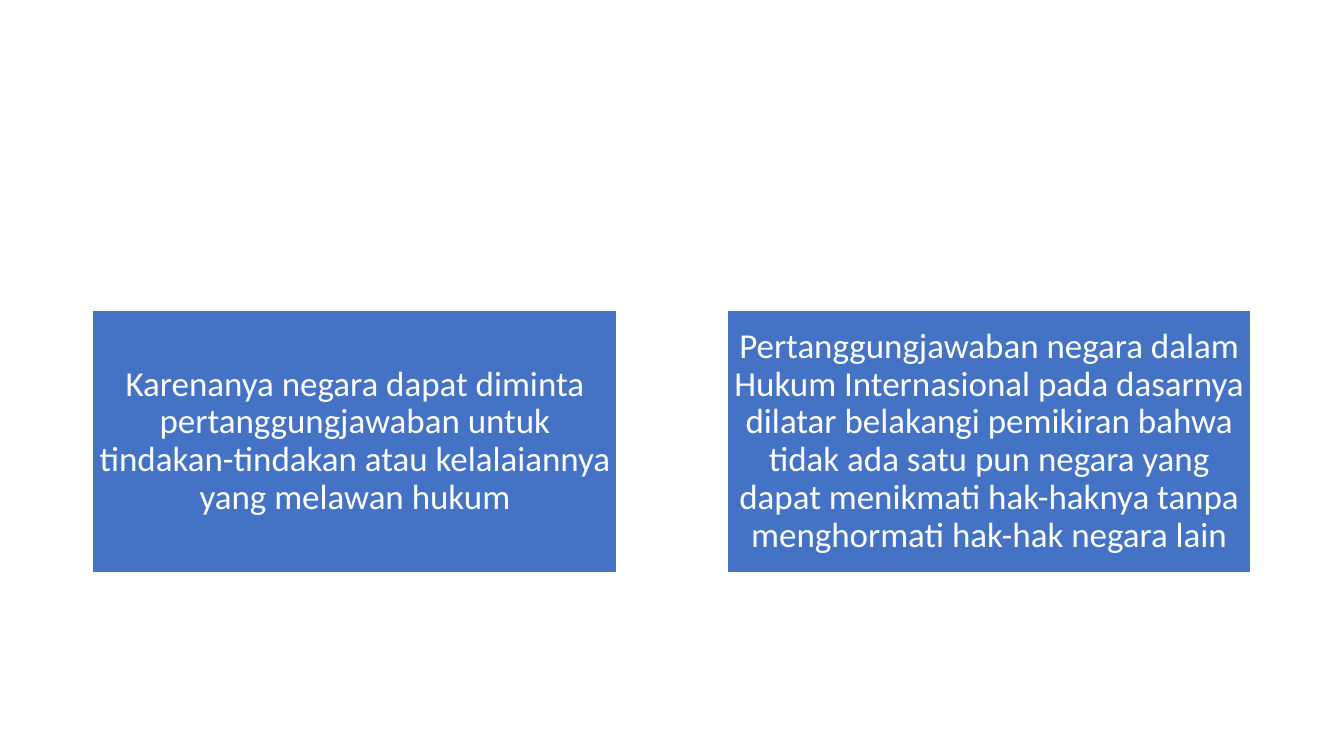
from pptx import Presentation
from pptx import util as u
from pptx.dml.color import RGBColor
from pptx.enum import shapes, text

HUES = {"card": "4472C4", "white": "FFFFFF"}
CARDS = [
    "Karenanya negara dapat diminta pertanggungjawaban untuk "
    "tindakan-tindakan atau kelalaiannya yang melawan hukum",
    "Pertanggungjawaban negara dalam Hukum Internasional pada dasarnya "
    "dilatar belakangi pemikiran bahwa tidak ada satu pun negara yang dapat "
    "menikmati hak-haknya tanpa menghormati hak-hak negara lain",
]


class Deck:
    """Holds the text style and the current slide."""

    font = "Calibri"
    size = u.Pt(25)

    def __init__(self, slide):
        self.slide = slide

    def hue(self, name):
        return RGBColor.from_string(HUES[name])

    def card(self, left, top, width, height, words):
        box = self.slide.shapes.add_shape(
            shapes.MSO_SHAPE.RECTANGLE,
            u.Inches(left), u.Inches(top), u.Inches(width), u.Inches(height))
        box.shadow.inherit = False
        box.fill.solid()
        box.fill.fore_color.rgb = self.hue("card")
        box.line.color.rgb = self.hue("white")
        box.line.width = u.Pt(1)
        self.label(box.text_frame, words)

    def label(self, frame, words):
        frame.text = words
        frame.word_wrap = True
        frame.vertical_anchor = text.MSO_ANCHOR.MIDDLE
        frame.margin_left = frame.margin_right = u.Inches(0.02)
        frame.margin_top = frame.margin_bottom = u.Inches(0.02)
        para = frame.paragraphs[0]
        para.alignment = text.PP_ALIGN.CENTER
        para.line_spacing = 0.9
        for run in para.runs:
            run.font.name = self.font
            run.font.size = self.size
            run.font.color.rgb = self.hue("white")


def main():
    show = Presentation()
    show.slide_width = u.Inches(13.33)
    show.slide_height = u.Inches(7.5)
    deck = Deck(show.slides.add_slide(show.slide_layouts[6]))
    for col, words in enumerate(CARDS):
        deck.card(0.92 + col * 6.29, 3.08, 5.2, 2.6, words)
    show.save("out.pptx")


if __name__ == "__main__":
    main()
